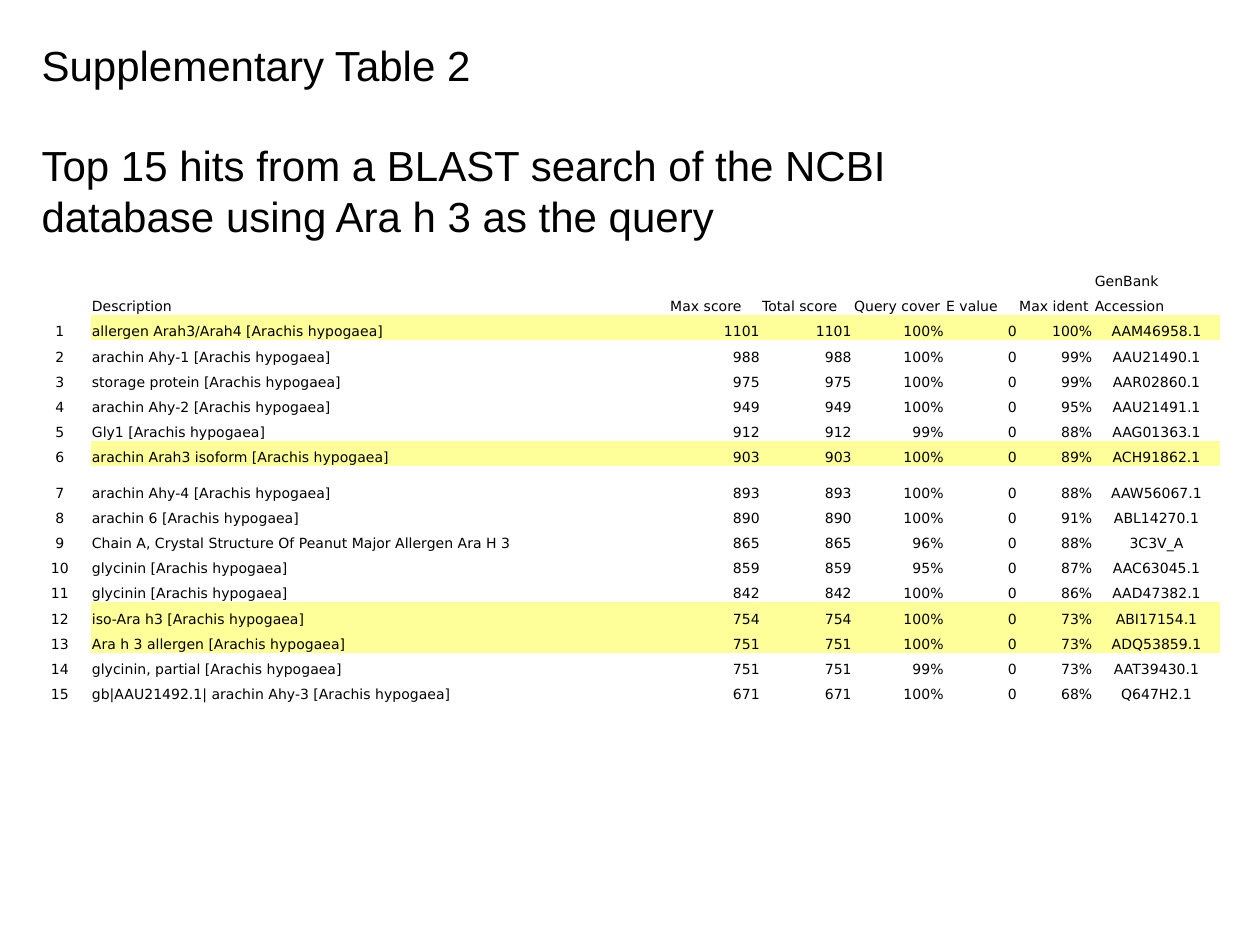
"""Build the slide listing the top 15 BLAST hits for Ara h 3."""
from pptx import Presentation
from pptx.dml.color import RGBColor
from pptx.enum import text
from pptx.util import Inches, Pt

THEME = {
    "ink": RGBColor(0, 0, 0),
    "highlight": RGBColor(0xFF, 0xFF, 0x99),
    "title_font": "Arial",
    "title_size": Pt(24),
    "table_font": "DejaVu Sans",
    "table_size": Pt(8),
}
NO_STYLE = "{2D5ABB26-0587-4C30-8999-92F81FD0307C}"
LEFT, CENTER, RIGHT = text.PP_ALIGN.LEFT, text.PP_ALIGN.CENTER, text.PP_ALIGN.RIGHT

TITLE = [
    "Supplementary Table 2",
    "Top 15 hits from a BLAST search of the NCBI database using Ara h 3 as the query",
]
HEADER = ["", "Description", "Max score", "Total score", "Query cover", "E value",
          "Max ident", "Accession"]
HITS = [
    ("allergen Arah3/Arah4 [Arachis hypogaea]", 1101, "100%", "100%", "AAM46958.1"),
    ("arachin Ahy-1 [Arachis hypogaea]", 988, "100%", "99%", "AAU21490.1"),
    ("storage protein [Arachis hypogaea]", 975, "100%", "99%", "AAR02860.1"),
    ("arachin Ahy-2 [Arachis hypogaea]", 949, "100%", "95%", "AAU21491.1"),
    ("Gly1 [Arachis hypogaea]", 912, "99%", "88%", "AAG01363.1"),
    ("arachin Arah3 isoform [Arachis hypogaea]", 903, "100%", "89%", "ACH91862.1"),
    ("arachin Ahy-4 [Arachis hypogaea]", 893, "100%", "88%", "AAW56067.1"),
    ("arachin 6 [Arachis hypogaea]", 890, "100%", "91%", "ABL14270.1"),
    ("Chain A, Crystal Structure Of Peanut Major Allergen Ara H 3", 865, "96%", "88%", "3C3V_A"),
    ("glycinin [Arachis hypogaea]", 859, "95%", "87%", "AAC63045.1"),
    ("glycinin [Arachis hypogaea]", 842, "100%", "86%", "AAD47382.1"),
    ("iso-Ara h3 [Arachis hypogaea]", 754, "100%", "73%", "ABI17154.1"),
    ("Ara h 3 allergen [Arachis hypogaea]", 751, "100%", "73%", "ADQ53859.1"),
    ("glycinin, partial [Arachis hypogaea]", 751, "99%", "73%", "AAT39430.1"),
    ("gb|AAU21492.1| arachin Ahy-3 [Arachis hypogaea]", 671, "100%", "68%", "Q647H2.1"),
]
HIGHLIGHTED_HITS = {1, 6, 12, 13}
TALL_HIT = 7
FIRST_HIT_ROW = 3
COLUMN_WIDTHS = [0.49, 4.59, 0.73, 0.73, 0.73, 0.58, 0.6, 1]
ALIGNMENTS = [CENTER, LEFT, RIGHT, RIGHT, RIGHT, RIGHT, RIGHT, CENTER]


def style_paragraph(paragraph, role, alignment):
    paragraph.alignment = alignment
    paragraph.font.name = THEME[f"{role}_font"]
    paragraph.font.size = THEME[f"{role}_size"]
    paragraph.font.color.rgb = THEME["ink"]


presentation = Presentation()
presentation.slide_width, presentation.slide_height = Inches(10), Inches(7.5)
slide = presentation.slides.add_slide(presentation.slide_layouts[5])

title = slide.shapes.title
title.left, title.top = Inches(0.23), Inches(0.26)
title.width, title.height = Inches(7.14), Inches(1.72)
title_frame = title.text_frame
title_frame.text = "\n".join(TITLE)
title_frame.word_wrap = True
title_frame.auto_size = text.MSO_AUTO_SIZE.NONE
title_frame.vertical_anchor = text.MSO_ANCHOR.TOP
for paragraph in title_frame.paragraphs:
    style_paragraph(paragraph, "title", LEFT)
title_frame.paragraphs[1].space_before = Pt(28.8)

blank = [""] * len(HEADER)
rows = [blank, blank[:-1] + ["GenBank"], HEADER]
for number, (description, score, cover, identity, accession) in enumerate(HITS, 1):
    rows.append([str(number), description, str(score), str(score), cover, "0",
                 identity, accession])
rows.append(blank)

row_heights = [0.2] * len(rows)
row_heights[FIRST_HIT_ROW + TALL_HIT - 1] = 0.28
table_frame = slide.shapes.add_table(
    len(rows), len(HEADER), Inches(0.23), Inches(1.9),
    Inches(sum(COLUMN_WIDTHS)), Inches(sum(row_heights)))
table = table_frame.table
table.first_row = table.horz_banding = False
table_frame._element.graphic.graphicData.tbl.tblPr[0].text = NO_STYLE
for column, width in zip(table.columns, COLUMN_WIDTHS):
    column.width = Inches(width)

for row_index, values in enumerate(rows):
    table.rows[row_index].height = Inches(row_heights[row_index])
    hit_number = row_index - FIRST_HIT_ROW + 1
    for column_index, value in enumerate(values):
        cell = table.cell(row_index, column_index)
        cell.margin_left = cell.margin_right = cell.margin_top = Inches(0.01)
        cell.margin_bottom = 0
        cell.vertical_anchor = text.MSO_ANCHOR.BOTTOM
        if hit_number in HIGHLIGHTED_HITS and column_index > 0:
            cell.fill.solid()
            cell.fill.fore_color.rgb = THEME["highlight"]
        else:
            cell.fill.background()
        cell.text = value
        paragraph = cell.text_frame.paragraphs[0]
        alignment = ALIGNMENTS[column_index] if hit_number > 0 else LEFT
        style_paragraph(paragraph, "table", alignment)
        if not value:
            end_properties = paragraph._p.get_or_add_endParaRPr()
            end_properties.set("sz", str(int(THEME["table_size"].pt * 100)))

presentation.save("out.pptx")
